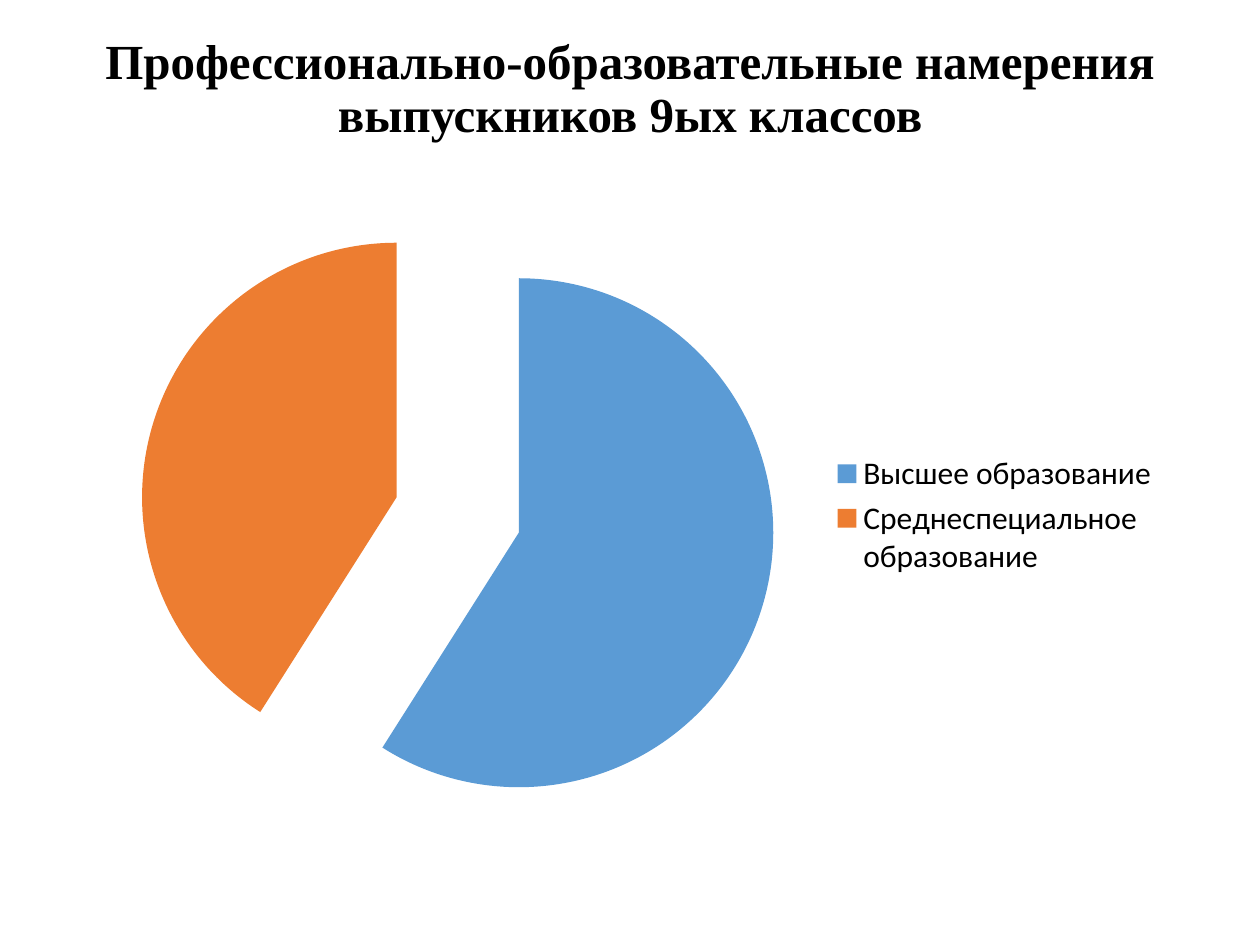
import pptx
import pptx.chart.data
import pptx.dml.color
import pptx.enum.chart
import pptx.enum.text
import pptx.oxml
import pptx.oxml.ns
import pptx.util

RGBColor = pptx.dml.color.RGBColor
BLACK = RGBColor(0x00, 0x00, 0x00)
BLUE = RGBColor(0x5B, 0x9B, 0xD5)
ORANGE = RGBColor(0xED, 0x7D, 0x31)

SLIDE_WIDTH = pptx.util.Inches(10)
SLIDE_HEIGHT = pptx.util.Inches(7.5)

TITLE = "Профессионально-образовательные намерения выпускников 9ых классов"
INTENTIONS = [
    ("Высшее образование", 59, BLUE),
    ("Среднеспециальное образование", 41, ORANGE),
]
EXPLOSION = 25


def place(left, top, width, height):
    return (
        int(SLIDE_WIDTH * left),
        int(SLIDE_HEIGHT * top),
        int(SLIDE_WIDTH * width),
        int(SLIDE_HEIGHT * height),
    )


def style_font(font, name, size, bold=False):
    font.name = name
    font.size = pptx.util.Pt(size)
    font.bold = bold
    font.color.rgb = BLACK


def add_title(slide, text, box):
    text_frame = slide.shapes.add_textbox(*box).text_frame
    text_frame.word_wrap = True
    text_frame.vertical_anchor = pptx.enum.text.MSO_ANCHOR.MIDDLE
    paragraph = text_frame.paragraphs[0]
    paragraph.text = text
    paragraph.alignment = pptx.enum.text.PP_ALIGN.CENTER
    paragraph.line_spacing = 0.9
    style_font(paragraph.font, "Times New Roman", 28, bold=True)


def explode_series(series, percent):
    explosion = pptx.oxml.parse_xml(
        f'<c:explosion {pptx.oxml.ns.nsdecls("c")} val="{percent}"/>'
    )
    series._element.find(pptx.oxml.ns.qn("c:tx")).addnext(explosion)


def add_pie(slide, slices, box):
    names, values, colors = zip(*slices)
    chart_data = pptx.chart.data.CategoryChartData()
    chart_data.categories = names
    chart_data.add_series("Series 1", values)
    chart = slide.shapes.add_chart(
        pptx.enum.chart.XL_CHART_TYPE.PIE, *box, chart_data
    ).chart
    style_font(chart.font, "Calibri", 18)
    chart.has_title = False
    chart.has_legend = True
    chart.legend.position = pptx.enum.chart.XL_LEGEND_POSITION.RIGHT
    chart.legend.include_in_layout = False

    plot = chart.plots[0]
    plot.vary_by_categories = True
    series = plot.series[0]
    explode_series(series, EXPLOSION)
    for index, color in enumerate(colors):
        fill = series.points[index].format.fill
        fill.solid()
        fill.fore_color.rgb = color


def main():
    presentation = pptx.Presentation()
    presentation.slide_width = SLIDE_WIDTH
    presentation.slide_height = SLIDE_HEIGHT
    slide = presentation.slides.add_slide(presentation.slide_layouts[6])
    add_title(slide, TITLE, place(0.07, 0.02, 0.86, 0.15))
    add_pie(slide, INTENTIONS, place(0.07, 0.19, 0.86, 0.71))
    presentation.save("out.pptx")


if __name__ == "__main__":
    main()
